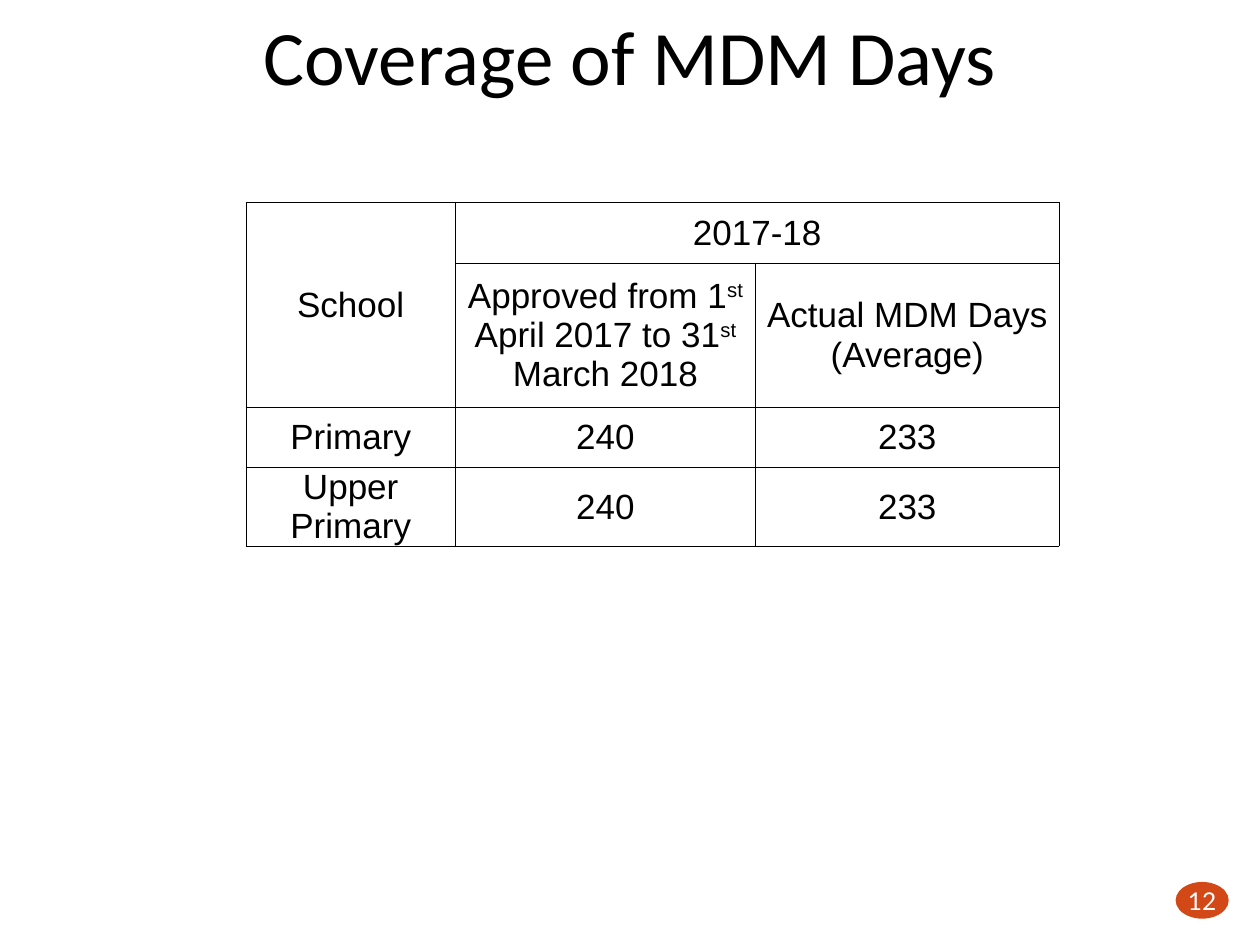
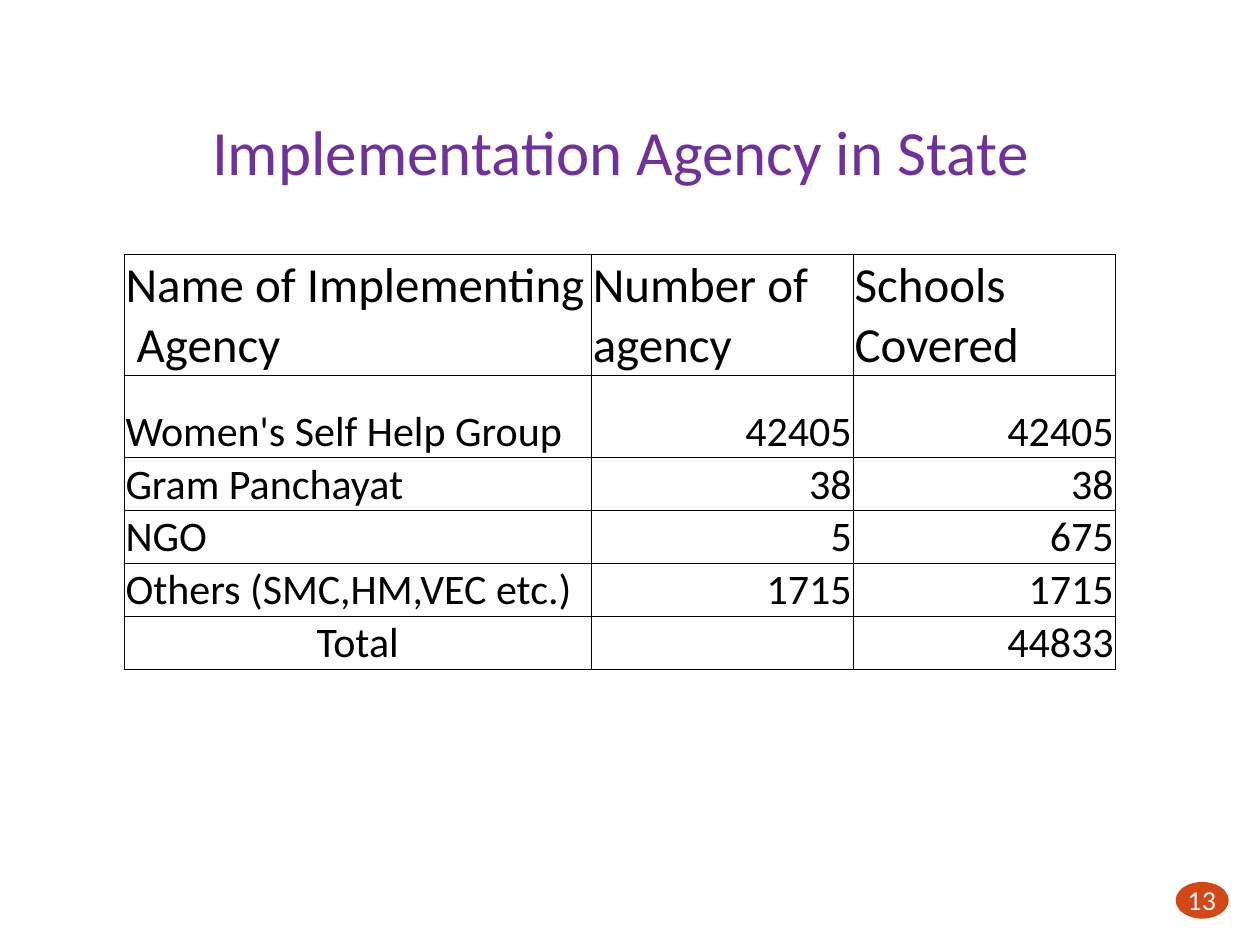
from lxml import etree
from pptx import Presentation
from pptx import util as u
from pptx.dml.color import RGBColor
from pptx.enum import shapes, text
from pptx.oxml import ns

BLACK = RGBColor(0x00, 0x00, 0x00)
WHITE = RGBColor(0xFF, 0xFF, 0xFF)
PURPLE = RGBColor(0x70, 0x30, 0xA0)
ORANGE = RGBColor(0xD3, 0x48, 0x17)
LEFT, CENTER, RIGHT = text.PP_ALIGN.LEFT, text.PP_ALIGN.CENTER, text.PP_ALIGN.RIGHT
MIDDLE, BOTTOM = text.MSO_ANCHOR.MIDDLE, text.MSO_ANCHOR.BOTTOM


def set_text(p, value, font, size, color, align):
    for i, part in enumerate(value.split("^")):
        if part:
            r = p.add_run()
            r.text = part
            if i % 2:
                r._r.get_or_add_rPr().set("baseline", "30000")
    p.alignment = align
    p.font.name = font
    p.font.size = u.Pt(size)
    p.font.color.rgb = color


def add_grid(s, left, top, widths, heights, inset):
    sp = s.shapes.add_table(len(heights), len(widths), u.Cm(left), u.Cm(top),
                            u.Cm(sum(widths)), u.Cm(sum(heights)))
    tbl = sp.table
    tbl.first_row = tbl.horz_banding = False
    for col, width in zip(tbl.columns, widths):
        col.width = u.Cm(width)
    for row, height in zip(tbl.rows, heights):
        row.height = u.Cm(height)
    for cell in tbl.iter_cells():
        cell.margin_left = cell.margin_right = cell.margin_top = u.Cm(inset)
        cell.margin_bottom = 0
        tc_pr = cell._tc.get_or_add_tcPr()
        for side in ("a:lnL", "a:lnR", "a:lnT", "a:lnB"):
            ln = etree.SubElement(tc_pr, ns.qn(side), w=str(u.Pt(0.5)))
            fill = etree.SubElement(ln, ns.qn("a:solidFill"))
            etree.SubElement(fill, ns.qn("a:srgbClr"), val=str(BLACK))
        cell.fill.background()
    return tbl


prs = Presentation()
prs.slide_width, prs.slide_height = u.Cm(25.4), u.Cm(19.05)

titles = [
    ("Coverage of MDM Days", 44, BLACK, (1.27, -0.48, 22.86, 3.18)),
    ("Implementation Agency in State", 36, PURPLE, (2.11, 2.13, 20.8, 1.8)),
]
for number, (title, size, color, box) in enumerate(titles, 12):
    s = prs.slides.add_slide(prs.slide_layouts[5])
    sp = s.shapes.title
    sp.left, sp.top, sp.width, sp.height = [u.Cm(v) for v in box]
    tf = sp.text_frame
    tf.auto_size = text.MSO_AUTO_SIZE.NONE
    tf.vertical_anchor = MIDDLE
    set_text(tf.paragraphs[0], title, "Calibri", size, color, CENTER)

    sp = s.shapes.add_shape(shapes.MSO_SHAPE.OVAL, u.Cm(23.7), u.Cm(17.78), u.Cm(1.07), u.Cm(0.74))
    sp.shadow.inherit = False
    sp.fill.solid()
    sp.fill.fore_color.rgb = ORANGE
    sp.line.fill.background()
    tf = sp.text_frame
    tf.word_wrap = False
    tf.vertical_anchor = MIDDLE
    tf.margin_left = tf.margin_right = tf.margin_top = tf.margin_bottom = 0
    set_text(tf.paragraphs[0], str(number), "Lato", 14, WHITE, CENTER)

days_slide, agency_slide = prs.slides

days = [
    ["School", "2017-18", ""],
    ["", "Approved from 1^st ^April 2017 to 31^st ^March 2018", "Actual MDM Days (Average)"],
    ["Primary", "240", "233"],
    ["Upper Primary", "240", "233"],
]
tbl = add_grid(days_slide, 4.96, 4.09, [4.22, 6.05, 6.12], [1.21, 2.92, 1.21, 1.57], 0)
tbl.cell(0, 0).merge(tbl.cell(1, 0))
tbl.cell(0, 1).merge(tbl.cell(0, 2))
for i, row in enumerate(days):
    for j, value in enumerate(row):
        cell = tbl.cell(i, j)
        cell.vertical_anchor = MIDDLE
        set_text(cell.text_frame.paragraphs[0], value, "Arial", 20, BLACK, CENTER)

agencies = [
    ["Name of Implementing\v Agency", "Number of agency", "Schools Covered"],
    ["Women's Self Help Group", "42405", "42405"],
    ["Gram Panchayat", "38", "38"],
    ["NGO", "5", "675"],
    ["Others (SMC,HM,VEC etc.)", "1715", "1715"],
    ["Total", "", "44833"],
]
tbl = add_grid(agency_slide, 2.5, 5.13, [9.42, 5.28, 5.28],
               [2.41, 1.65, 1.04, 1.04, 1.07, 1.02], 0.03)
for i, row in enumerate(agencies):
    for j, value in enumerate(row):
        cell = tbl.cell(i, j)
        total = value == "Total"
        cell.vertical_anchor = MIDDLE if total else BOTTOM
        align = CENTER if total else RIGHT if i and j else LEFT
        p = cell.text_frame.paragraphs[0]
        if "\v" in value:
            first, value = value.split("\v")
            p.add_run().text = first
            p.add_line_break()
        set_text(p, value, "Calibri", 24 if i else 28, BLACK, align)

prs.save("out.pptx")
